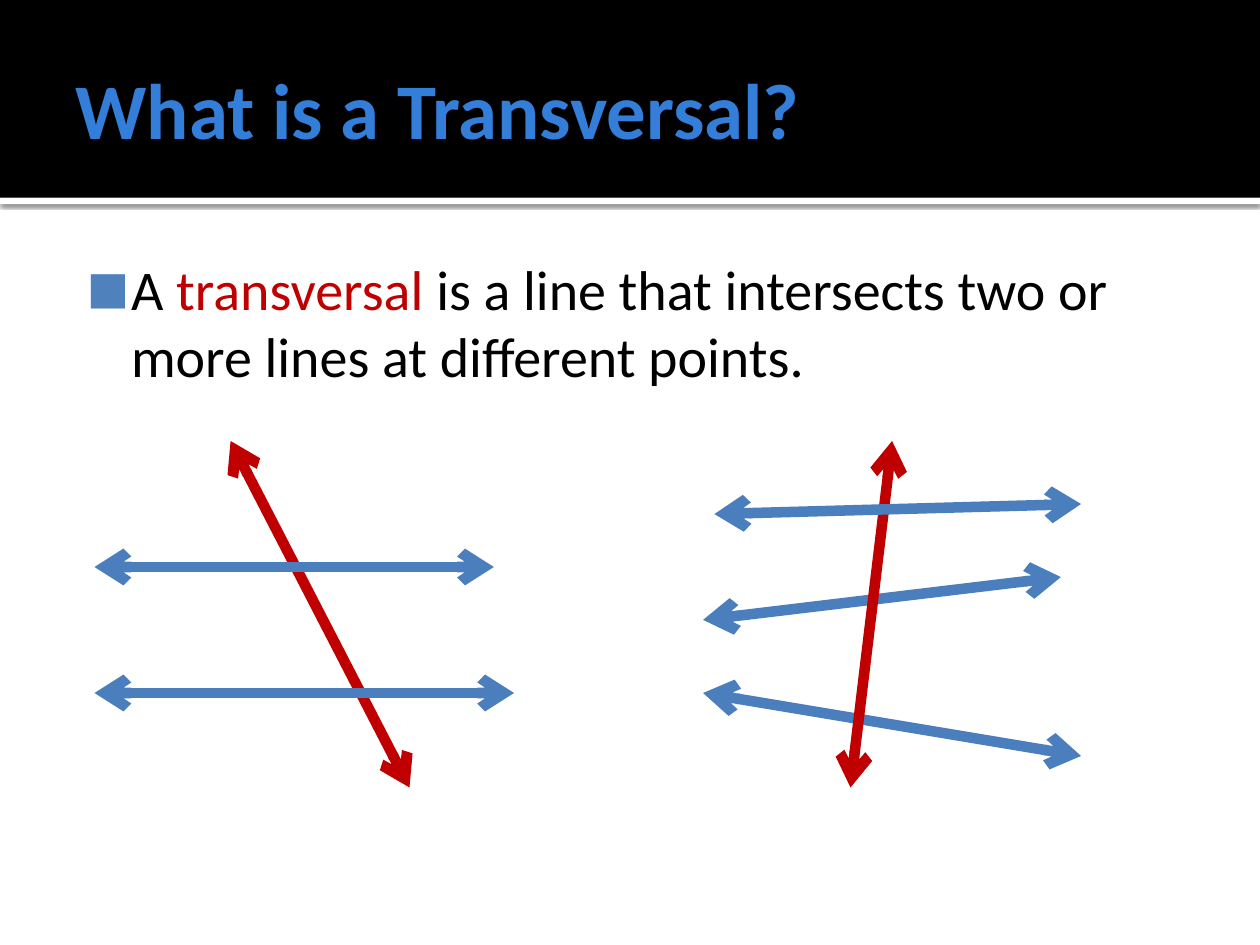
from dataclasses import dataclass

import lxml.etree
import pptx
import pptx.dml.color
import pptx.enum.shapes
import pptx.enum.text
import pptx.oxml.ns
import pptx.util

Inches = pptx.util.Inches
Pt = pptx.util.Pt
qn = pptx.oxml.ns.qn


@dataclass(frozen=True)
class Theme:
    font: str = "Calibri"
    title_size: float = 45
    body_size: float = 32
    line_width: float = 6
    black: str = "000000"
    white: str = "FFFFFF"
    title: str = "337ED9"
    bullet: str = "4F81BD"
    crossed: str = "4B7EBC"
    transversal: str = "C00000"


@dataclass(frozen=True)
class Band:
    top: float
    height: float
    color: str
    shadow: bool = False


@dataclass(frozen=True)
class GeometryLine:
    start: tuple[float, float]
    end: tuple[float, float]
    color: str


THEME = Theme()

BANDS = [
    Band(1.57, 0.05, THEME.white, shadow=True),
    Band(0, 1.57, THEME.black),
]

# Back to front: each transversal shows over or under the lines it crosses
LINES = [
    GeometryLine((1.83, 3.5), (3.25, 6.25), THEME.transversal),
    GeometryLine((5.58, 4.92), (8.42, 4.58), THEME.crossed),
    GeometryLine((5.58, 5.5), (8.58, 6), THEME.crossed),
    GeometryLine((0.75, 5.5), (4.08, 5.5), THEME.crossed),
    GeometryLine((0.75, 4.5), (3.92, 4.5), THEME.crossed),
    GeometryLine((7.08, 3.5), (6.75, 6.25), THEME.transversal),
    GeometryLine((5.67, 4.08), (8.58, 4), THEME.crossed),
]

DEFINITION = [
    ("A ", THEME.black),
    ("transversal", THEME.transversal),
    (" is a line that intersects two or more lines at different points.", THEME.black),
]


def rgb(color: str) -> pptx.dml.color.RGBColor:
    return pptx.dml.color.RGBColor.from_string(color)


def add_xml(parent, tag: str, **attributes: str):
    return lxml.etree.SubElement(parent, qn(tag), attributes)


def add_band(slide, band: Band) -> None:
    bar = slide.shapes.add_shape(
        pptx.enum.shapes.MSO_SHAPE.RECTANGLE,
        0, Inches(band.top), Inches(10), Inches(band.height))
    bar.fill.solid()
    bar.fill.fore_color.rgb = rgb(band.color)
    bar.line.fill.background()
    bar.shadow.inherit = False
    if band.shadow:
        effects = bar._element.spPr.find(qn("a:effectLst"))
        shadow = add_xml(effects, "a:outerShdw", blurRad=str(Pt(2.5)),
                         dist=str(Pt(0.8)), dir="5400000", algn="tl", rotWithShape="0")
        shade = add_xml(shadow, "a:srgbClr", val=THEME.black)
        add_xml(shade, "a:alpha", val="60000")


def add_line(slide, line: GeometryLine) -> None:
    arrow = slide.shapes.add_connector(
        pptx.enum.shapes.MSO_CONNECTOR.STRAIGHT,
        *(Inches(value) for value in line.start + line.end))
    arrow.line.width = Pt(THEME.line_width)
    arrow.line.color.rgb = rgb(line.color)
    for tip in ("a:headEnd", "a:tailEnd"):
        add_xml(arrow.line._get_or_add_ln(), tip, type="arrow")
    add_xml(arrow._element.spPr, "a:effectLst")


def place(placeholder, box: tuple, insets: tuple, anchor):
    """Position a placeholder and return its first paragraph."""
    placeholder.left, placeholder.top, placeholder.width, placeholder.height = map(Inches, box)
    frame = placeholder.text_frame
    frame.margin_left, frame.margin_top, frame.margin_right, frame.margin_bottom = map(
        Inches, insets)
    frame.vertical_anchor = anchor
    frame.word_wrap = True
    frame.auto_size = pptx.enum.text.MSO_AUTO_SIZE.NONE
    paragraph = frame.paragraphs[0]
    paragraph.alignment = pptx.enum.text.PP_ALIGN.LEFT
    paragraph.space_before = Pt(0)
    return paragraph


def add_run(paragraph, text: str, size: float, color: str, bold: bool = False) -> None:
    run = paragraph.add_run()
    run.text = text
    run.font.name = THEME.font
    run.font.size = Pt(size)
    run.font.bold = bold
    run.font.color.rgb = rgb(color)


def add_bullet(paragraph) -> None:
    properties = paragraph._p.get_or_add_pPr()
    properties.set("marL", str(Inches(0.48)))
    properties.set("indent", str(Inches(-0.35)))
    add_xml(add_xml(properties, "a:buClr"), "a:srgbClr", val=THEME.bullet)
    add_xml(properties, "a:buSzPct", val="80000")
    add_xml(properties, "a:buFont", typeface=THEME.font)
    add_xml(properties, "a:buChar", char="■")


def main() -> None:
    deck = pptx.Presentation()
    deck.slide_width, deck.slide_height = Inches(10), Inches(7.5)
    slide = deck.slides.add_slide(deck.slide_layouts[1])
    title, body = slide.placeholders[0], slide.placeholders[1]

    # Header bands, with the placeholders brought in front of them
    for band in BANDS:
        add_band(slide, band)
    for placeholder in (title, body):
        slide.shapes._spTree.append(placeholder._element)

    # Title
    heading = place(title, (0.5, 0.17, 9, 1.37), (0.1, 0.05, 0.05, 0.05),
                    pptx.enum.text.MSO_ANCHOR.MIDDLE)
    add_run(heading, "What is a Transversal?", THEME.title_size, THEME.title, bold=True)

    # Definition
    definition = place(body, (0.5, 1.92, 9, 5.06), (0.06, 0.1, 0.1, 0.05),
                       pptx.enum.text.MSO_ANCHOR.TOP)
    add_bullet(definition)
    for text, color in DEFINITION:
        add_run(definition, text, THEME.body_size, color)

    # Two example diagrams
    for line in LINES:
        add_line(slide, line)

    deck.save("out.pptx")


if __name__ == "__main__":
    main()
